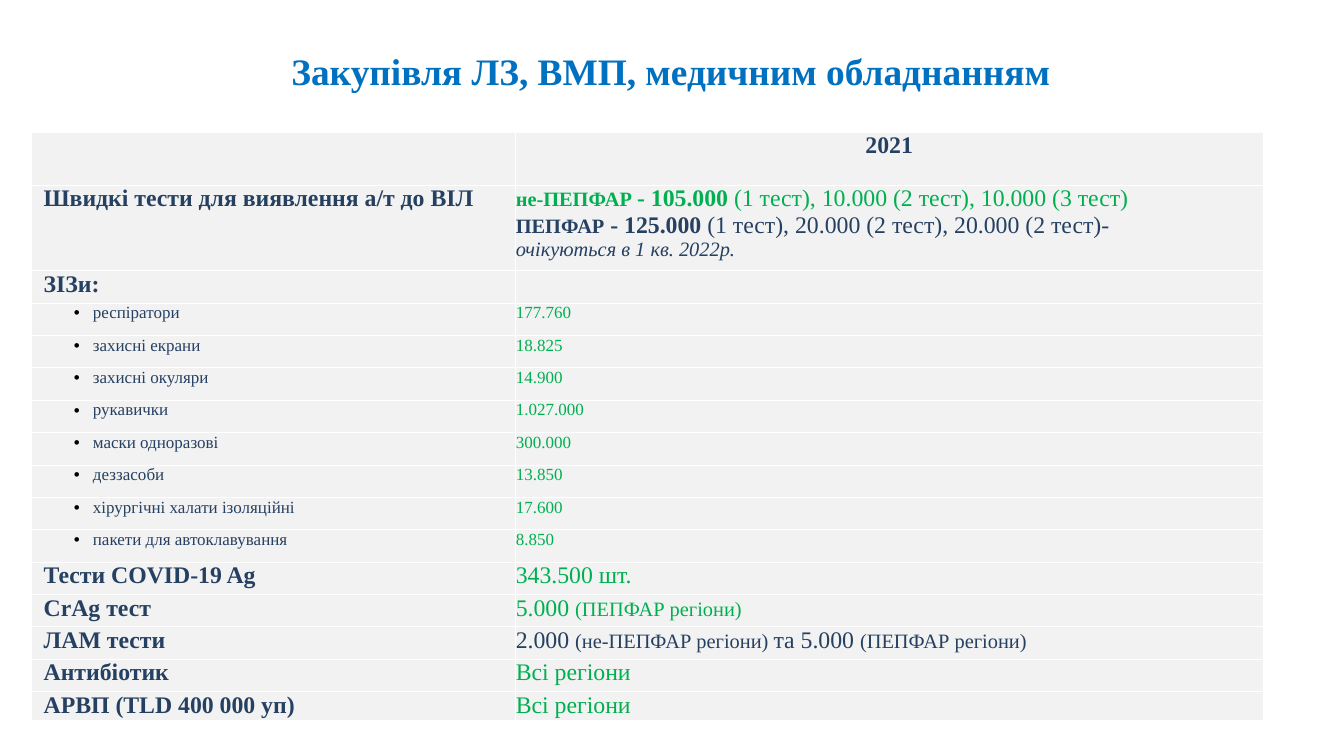
from lxml import etree
from pptx import Presentation
from pptx.dml.color import RGBColor
from pptx.enum.text import PP_ALIGN
from pptx.oxml import parse_xml
from pptx.oxml.ns import nsdecls
from pptx.util import Pt

CENTER = PP_ALIGN.CENTER
BLUE = RGBColor(0x00, 0x70, 0xC0)
NAVY = RGBColor(0x25, 0x40, 0x61)
GREEN = RGBColor(0x00, 0xB0, 0x50)
GREY = RGBColor(0xF2, 0xF2, 0xF2)
WHITE = RGBColor(0xFF, 0xFF, 0xFF)
BLACK = RGBColor(0x00, 0x00, 0x00)

LARGE, MEDIUM, SMALL = 28, 24, 20
HEADING_INDENT = 14
BULLET_INDENT, BULLET_HANG = 72, 22.5

COLUMN_WIDTHS = [570.2, 881.2]
HEADER_HEIGHT, TESTS_HEIGHT, ROW_HEIGHT, LAST_HEIGHT = 62.6, 100.8, 38.15, 34

PROTECTION_ITEMS = [
    ("респіратори", "177.760"),
    ("захисні екрани", "18.825"),
    ("захисні окуляри", "14.900"),
    ("рукавички", "1.027.000"),
    ("маски одноразові", "300.000"),
    ("деззасоби", "13.850"),
    ("хірургічні халати ізоляційні", "17.600"),
    ("пакети для автоклавування", "8.850"),
]


def span(text, size=LARGE, color=GREEN, **style):
    return text, {"size": Pt(size), "color": color, **style}


def heading(text):
    return [[span(text, color=NAVY, bold=True)]]


def protection_row(item, amount):
    return [[span(item, SMALL, NAVY)]], [[span(amount, SMALL)]]


class SlideBuilder:
    def __init__(self, slide, font_name):
        self.slide = slide
        self.font_name = font_name

    def fill_text(self, frame, lines):
        """Fill a text frame; each line is a list of spans."""
        for index, line in enumerate(lines):
            para = frame.paragraphs[0] if index == 0 else frame.add_paragraph()
            for text, style in line:
                run = para.add_run()
                run.text = text
                run.font.name = self.font_name
                for name, value in style.items():
                    if name == "color":
                        run.font.color.rgb = value
                    else:
                        setattr(run.font, name, value)

    def text(self, left, top, width, height, lines):
        box = self.slide.shapes.add_textbox(Pt(left), Pt(top), Pt(width), Pt(height))
        box.text_frame.word_wrap = True
        self.fill_text(box.text_frame, lines)

    def indent(self, para, left, hang=0):
        """Indent a paragraph; a hanging one also gets a bullet."""
        properties = para._p.get_or_add_pPr()
        properties.set("marL", str(Pt(left)))
        properties.set("indent", str(-Pt(hang)))
        if hang:
            for element in (
                f'<a:buClr {nsdecls("a")}><a:srgbClr val="{BLACK}"/></a:buClr>',
                f'<a:buFont {nsdecls("a")} typeface="Arial"/>',
                f'<a:buChar {nsdecls("a")} char="•"/>',
            ):
                properties.append(parse_xml(element))

    def style_cell(self, cell):
        for side in ("left", "right", "top"):
            setattr(cell, f"margin_{side}", Pt(0.75))
        cell.margin_bottom = 0
        properties = cell._tc.get_or_add_tcPr()
        for edge in "LRTB":
            border = parse_xml(
                f'<a:ln{edge} {nsdecls("a")} w="{Pt(1)}"><a:solidFill/></a:ln{edge}>')
            etree.SubElement(border[0], border[0].tag.replace("solidFill", "srgbClr"),
                             val=str(WHITE))
            properties.append(border)
        cell.fill.solid()
        cell.fill.fore_color.rgb = GREY

    def table(self, left, top, widths, heights, rows):
        frame = self.slide.shapes.add_table(
            len(rows), len(widths), Pt(left), Pt(top), Pt(sum(widths)), Pt(sum(heights)))
        table = frame.table
        table.first_row = table.horz_banding = False
        for column, width in zip(table.columns, widths):
            column.width = Pt(width)
        for row, height, contents in zip(table.rows, heights, rows):
            row.height = Pt(height)
            for cell, lines in zip(row.cells, contents):
                self.style_cell(cell)
                self.fill_text(cell.text_frame, lines)
        return table


def main():
    deck = Presentation()
    deck.slide_width, deck.slide_height = Pt(1583.3), Pt(890.6)
    page = SlideBuilder(deck.slides.add_slide(deck.slide_layouts[6]), "Times New Roman")

    page.text(336.2, 53.3, 998, 60.5, [[
        span("Закупівля ЛЗ, ВМП, медичним обладнанням", 44, BLUE, bold=True)]])

    rapid_tests = [
        [span("не-ПЕПФАР ", MEDIUM, bold=True),
         span("- 105.000 ", bold=True),
         span("(1 тест), 10.000 (2 тест), 10.000 (3 тест)")],
        [span("ПЕПФАР", MEDIUM, NAVY, bold=True),
         span(" - 125.000 ", color=NAVY, bold=True),
         span("(1 тест), 20.000 (2 тест), 20.000 (2 тест)-", color=NAVY)],
        [span("очікуються в 1 кв. 2022р.", MEDIUM, NAVY, italic=True)],
    ]
    lam_tests = [[
        span("2.000 ", color=NAVY), span("(не-ПЕПФАР регіони) ", MEDIUM, NAVY),
        span("та 5.000 ", color=NAVY), span("(ПЕПФАР регіони)", MEDIUM, NAVY)]]
    all_regions = [[span("Всі регіони")]]

    rows = [
        ([], heading("2021")),
        (heading("Швидкі тести для виявлення а/т до ВІЛ"), rapid_tests),
        (heading("ЗІЗи:"), []),
        *[protection_row(item, amount) for item, amount in PROTECTION_ITEMS],
        (heading("Тести COVID-19 Ag"), [[span("343.500 шт.")]]),
        (heading("CrAg тест"), [[span("5.000 "), span("(ПЕПФАР регіони)", MEDIUM)]]),
        (heading("ЛАМ тести"), lam_tests),
        (heading("Антибіотик"), all_regions),
        (heading("АРВП (TLD 400 000 уп)"), all_regions),
    ]
    heights = [HEADER_HEIGHT, TESTS_HEIGHT, *[ROW_HEIGHT] * (len(rows) - 3), LAST_HEIGHT]
    table = page.table(36.7, 155.5, COLUMN_WIDTHS, heights, rows)

    table.cell(0, 1).text_frame.paragraphs[0].alignment = CENTER
    first_item = 3
    item_rows = range(first_item, first_item + len(PROTECTION_ITEMS))
    for index in range(1, len(rows)):
        para = table.cell(index, 0).text_frame.paragraphs[0]
        if index in item_rows:
            page.indent(para, BULLET_INDENT, BULLET_HANG)
        else:
            page.indent(para, HEADING_INDENT)

    deck.save("out.pptx")


if __name__ == "__main__":
    main()
